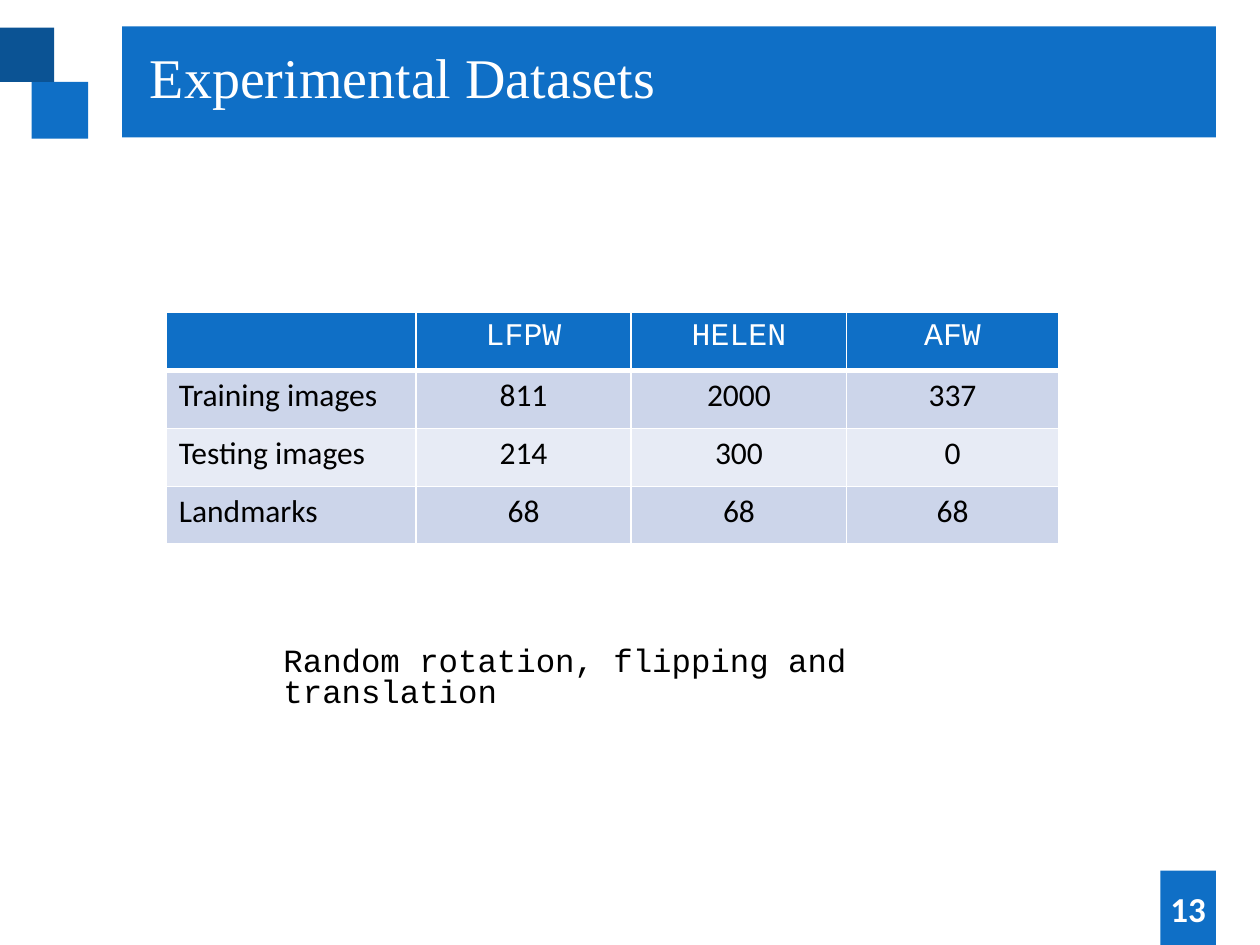
import pptx
import pptx.dml.color
import pptx.enum.shapes
import pptx.enum.text
import pptx.oxml
import pptx.oxml.ns
import pptx.util

COLORS = {
    "blue": "0F6FC6",
    "navy": "0B5394",
    "white": "FFFFFF",
    "black": "000000",
    "odd row": "CCD5EA",
    "even row": "E7EBF5",
}
# The slide is a grid of 100 columns by 75 rows of square units.
UNIT = pptx.util.Inches(0.1)
ALIGN = pptx.enum.text.PP_ALIGN


def box(*units):
    """Turn left, top, width and height in grid units into lengths."""
    return [round(value * UNIT) for value in units]


def format_text(paragraph, font_name, size, color, alignment=ALIGN.LEFT):
    paragraph.alignment = alignment
    paragraph.font.name = font_name
    paragraph.font.size = pptx.util.Pt(size)
    paragraph.font.color.rgb = pptx.dml.color.RGBColor.from_string(COLORS[color])


presentation = pptx.Presentation()
presentation.slide_width, presentation.slide_height = box(100, 75)
slide = presentation.slides.add_slide(presentation.slide_layouts[5])

# Decorative squares, page number tile and title band
for color, bounds in [
    ("blue", (2.5, 6.5, 4.5, 4.5)),
    ("navy", (0, 2.2, 4.3, 4.3)),
    ("blue", (92.1, 69.1, 4.4, 5.9)),
    ("blue", (9.7, 2.1, 86.8, 8.8)),
]:
    shape = slide.shapes.add_shape(
        pptx.enum.shapes.MSO_SHAPE.RECTANGLE, *box(*bounds))
    shape.shadow.inherit = False
    shape.fill.solid()
    shape.fill.fore_color.rgb = pptx.dml.color.RGBColor.from_string(COLORS[color])
    shape.line.fill.background()

# Title, brought in front of its band
title = slide.shapes.title
title.left, title.top, title.width, title.height = box(10.9, 2.9, 63.2, 6.4)
title.text_frame.text = "Experimental Datasets"
title.text_frame.auto_size = pptx.enum.text.MSO_AUTO_SIZE.NONE
title.text_frame.vertical_anchor = pptx.enum.text.MSO_ANCHOR.TOP
format_text(title.text_frame.paragraphs[0], "Times New Roman", 32, "white")
slide.shapes.element.append(title.element)

# Page number
page_number = slide.shapes.add_textbox(*box(88.6, 70.1, 11.4, 4))
page_number.text_frame.word_wrap = True
page_number.text_frame.vertical_anchor = pptx.enum.text.MSO_ANCHOR.MIDDLE
paragraph = page_number.text_frame.paragraphs[0]
paragraph.text = "13"
paragraph.font.bold = True
format_text(paragraph, "Calibri", 20, "white", ALIGN.CENTER)

# Augmentation note
note = slide.shapes.add_textbox(*box(16.5, 50.9, 57.6, 3.7))
note.text_frame.word_wrap = True
note.text_frame.margin_left = 6 * UNIT
paragraph = note.text_frame.paragraphs[0]
paragraph.text = "Random rotation, flipping and translation"
paragraph.line_spacing = 0.8
paragraph.space_before = pptx.util.Pt(5)
format_text(paragraph, "Courier New", 18.5, "black")

# Dataset table
rows = [
    ("", "LFPW", "HELEN", "AFW"),
    ("Training images", "811", "2000", "337"),
    ("Testing images", "214", "300", "0"),
    ("Landmarks", "68", "68", "68"),
]
row_fills = ["blue", "odd row", "even row", "odd row"]
table = slide.shapes.add_table(
    len(rows), len(rows[0]), *box(13.2, 24.8, 70.8, 18.4)).table
for column, width in zip(table.columns, box(19.8, 17.1, 17.1, 16.8)):
    column.width = width

for row_index, values in enumerate(rows):
    for column_index, value in enumerate(values):
        cell = table.cell(row_index, column_index)
        properties = cell._tc.get_or_add_tcPr()
        for side in "LRTB":
            heavy = (row_index, side) in [(0, "B"), (1, "T")]
            properties.append(pptx.oxml.parse_xml(
                f'<a:ln{side} {pptx.oxml.ns.nsdecls("a")} '
                f'w="{pptx.util.Pt(3 if heavy else 1)}"><a:solidFill>'
                f'<a:srgbClr val="{COLORS["white"]}"/></a:solidFill></a:ln{side}>'))
        cell.fill.solid()
        cell.fill.fore_color.rgb = pptx.dml.color.RGBColor.from_string(
            COLORS[row_fills[row_index]])
        paragraph = cell.text_frame.paragraphs[0]
        paragraph.text = value
        paragraph.font.bold = False
        font_name, color = (
            ("Courier New", "white") if row_index == 0 else ("Calibri", "black"))
        alignment = ALIGN.CENTER if column_index else ALIGN.LEFT
        format_text(paragraph, font_name, 18, color, alignment)

presentation.save("out.pptx")
